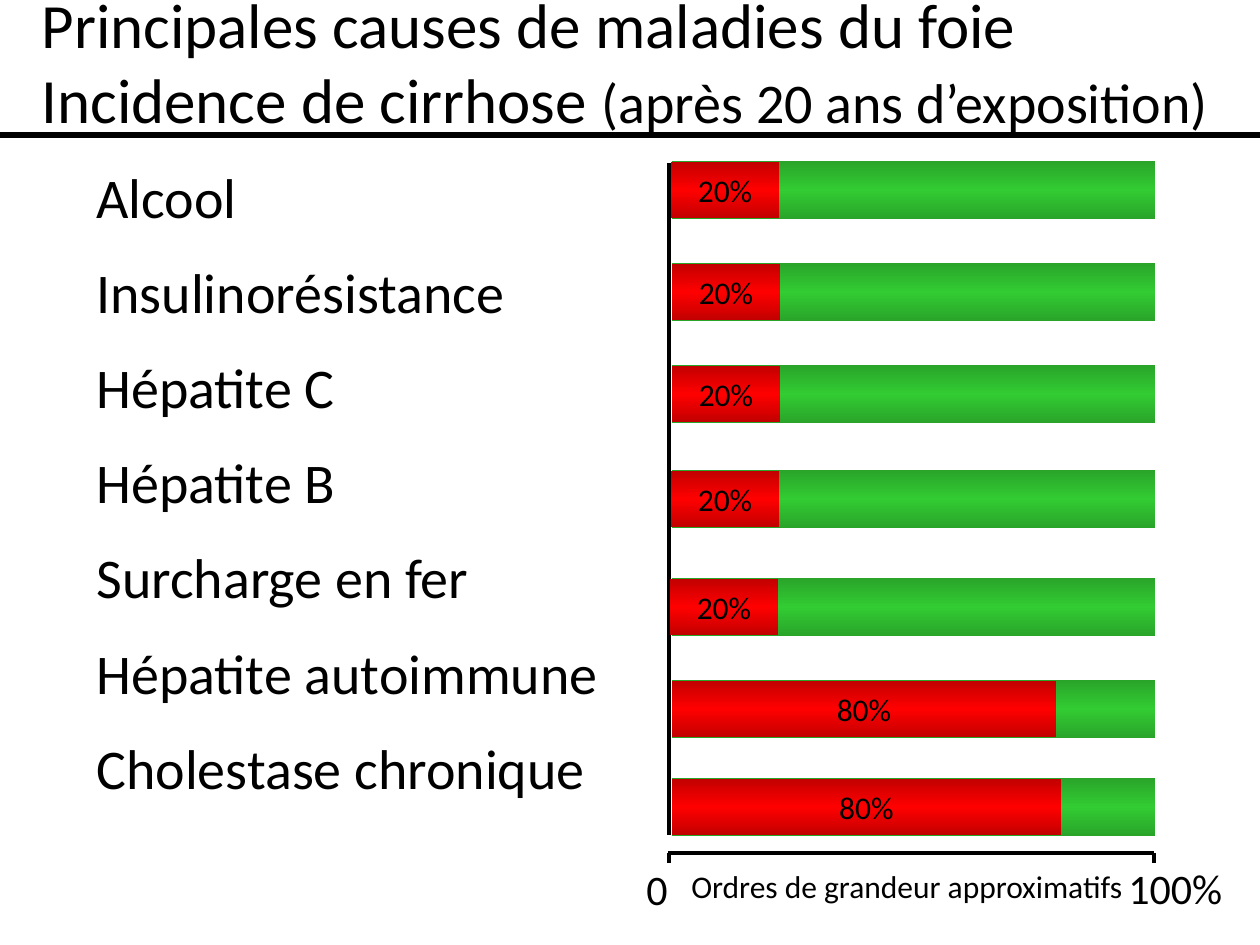
from copy import deepcopy
from lxml.etree import SubElement
from pptx import Presentation
from pptx.dml.color import RGBColor
from pptx.enum.shapes import MSO_CONNECTOR, MSO_SHAPE
from pptx.enum.text import MSO_ANCHOR, MSO_AUTO_SIZE, PP_ALIGN
from pptx.oxml.ns import qn
from pptx.util import Emu, Pt

PX = 914400 / 126
BLACK = "000000"
GREEN = ("29A429", "33CC33", "29A429")
RED = ("C30000", "FF0000", "C30000")


def px(n):
    return Emu(round(n * PX))


def rgb(color):
    return RGBColor.from_string(color)


class Deck:
    font = "Calibri"

    def __init__(self, prs):
        self.prs = prs
        self.s = prs.slides.add_slide(prs.slide_layouts[5])

    def place(self, sp, x, y, w, h):
        sp.left, sp.top, sp.width, sp.height = px(x), px(y), px(w), px(h)

    def add_runs(self, tf, paragraphs, align=PP_ALIGN.LEFT, before=None):
        tf.word_wrap = False
        for i, runs in enumerate(paragraphs):
            p = tf.add_paragraph() if i else tf.paragraphs[0]
            p.alignment = align
            if before:
                spc = SubElement(p._p.get_or_add_pPr(), qn("a:spcBef"))
                SubElement(spc, qn("a:spcPct")).set("val", str(before * 1000))
            for text, size in runs:
                r = p.add_run()
                r.text = text
                r.font.name = self.font
                r.font.size = Pt(size)
                r.font.color.rgb = rgb(BLACK)

    def title(self, x, y, w, h, paragraphs):
        sp = self.s.shapes.title
        self.place(sp, x, y, w, h)
        tf = sp.text_frame
        tf.vertical_anchor = MSO_ANCHOR.TOP
        tf.auto_size = MSO_AUTO_SIZE.SHAPE_TO_FIT_TEXT
        self.add_runs(tf, paragraphs)

    def text(self, x, y, w, h, lines, size, before=None):
        sp = self.s.shapes.add_textbox(px(x), px(y), px(w), px(h))
        tf = sp.text_frame
        tf.auto_size = MSO_AUTO_SIZE.SHAPE_TO_FIT_TEXT
        self.add_runs(tf, [[(line, size)] for line in lines], before=before)

    def line(self, x1, y1, x2, y2, width=2.25):
        c = self.s.shapes.add_connector(
            MSO_CONNECTOR.STRAIGHT, px(x1), px(y1), px(x2), px(y2))
        c.line.color.rgb = rgb(BLACK)
        c.line.width = Pt(width)
        SubElement(c._element.spPr, qn("a:effectLst"))

    def bar(self, x, y, w, h, colors, label=None):
        sp = self.s.shapes.add_shape(
            MSO_SHAPE.RECTANGLE, px(x), px(y), px(w), px(h))
        sp.shadow.inherit = False
        sp.line.fill.background()
        sp.fill.gradient()
        sp.fill.gradient_angle = 270
        stops = sp._element.spPr.find(".//" + qn("a:gsLst"))
        stops.append(deepcopy(stops[0]))
        for i, (stop, color) in enumerate(zip(sp.fill.gradient_stops, colors)):
            stop.position = i / 2
            stop.color.rgb = rgb(color)
        if label:
            sp.text_frame.vertical_anchor = MSO_ANCHOR.MIDDLE
            self.add_runs(sp.text_frame, [[(label, 18)]], PP_ALIGN.CENTER)


def main():
    prs = Presentation()
    prs.slide_width, prs.slide_height = px(1260), px(945)
    d = Deck(prs)

    d.title(29, -21, 1208, 165, [
        [("Principales causes de maladies du foie", 36)],
        [("Incidence de cirrhose ", 36), ("(après 20 ans d’exposition)", 32)],
    ])
    d.line(0, 135, 1260, 135, 3)

    causes = [
        ("Alcool", 161, 671, 108, "20%"),
        ("Insulinorésistance", 263, 672, 108, "20%"),
        ("Hépatite C", 365, 672, 108, "20%"),
        ("Hépatite B", 470, 671, 108, "20%"),
        ("Surcharge en fer", 578, 670, 108, "20%"),
        ("Hépatite autoimmune", 680, 672, 384, "80%"),
        ("Cholestase chronique", 778, 672, 389, "80%"),
    ]
    d.text(84, 156, 542, 685, [cause[0] for cause in causes], 32, before=50)

    d.line(669, 163, 669, 835)
    for _, y, x, w, share in causes:
        d.bar(672, y, 483, 58, GREEN)
        d.bar(x, y + 1, w, 56, RED, share)

    d.line(668, 853, 1154, 853)
    for x in (669, 1154):
        d.line(x, 853, x, 863)
    d.text(634, 857, 47, 63, ["0"], 24)
    d.text(679, 861, 464, 50, ["Ordres de grandeur approximatifs"], 18)
    d.text(1116, 856, 120, 63, ["100%"], 24)

    prs.save("out.pptx")


if __name__ == "__main__":
    main()
